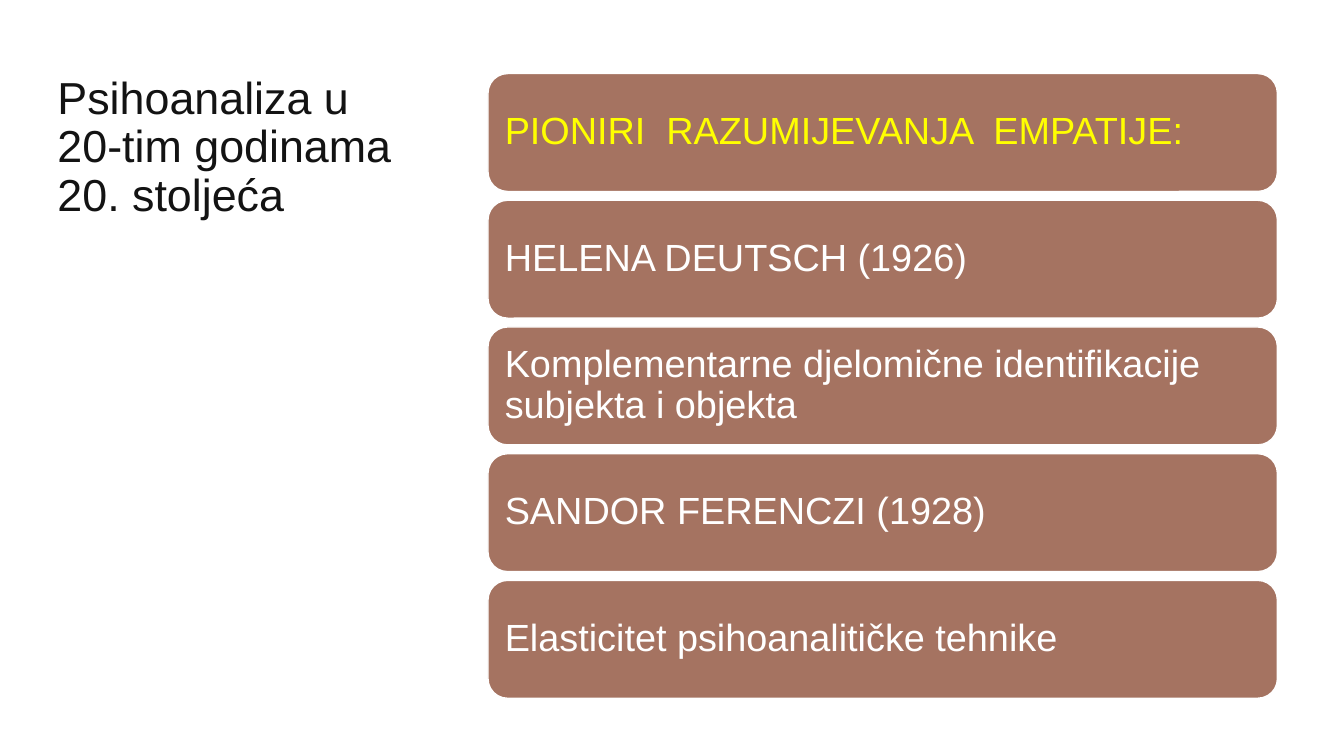
from dataclasses import dataclass

from pptx import Presentation
from pptx import util as u
from pptx.dml.color import RGBColor
from pptx.enum import shapes, text

INK = RGBColor(0x13, 0x13, 0x13)
BROWN = RGBColor(0xA5, 0x73, 0x61)
YELLOW = RGBColor(0xFF, 0xFF, 0x00)
WHITE = RGBColor(0xFF, 0xFF, 0xFF)
FONT = "Arial"

CARD_LEFT, CARD_TOP = 4.84, 0.73
CARD_WIDTH, CARD_HEIGHT = 7.83, 1.17
CARD_PITCH = 1.257
CARD_INSET = u.Inches(0.11)


@dataclass
class Card:
    wording: str
    color: RGBColor = WHITE


CARDS = [
    Card("PIONIRI  RAZUMIJEVANJA  EMPATIJE:", YELLOW),
    Card("HELENA DEUTSCH (1926)"),
    Card("Komplementarne djelomične identifikacije subjekta i objekta"),
    Card("SANDOR FERENCZI (1928)"),
    Card("Elasticitet psihoanalitičke tehnike"),
]


def write(frame, wording: str, size: float, color: RGBColor) -> None:
    """Fill a text frame with one left-aligned paragraph."""
    frame.word_wrap = True
    frame.auto_size = text.MSO_AUTO_SIZE.NONE
    para = frame.paragraphs[0]
    para.alignment = text.PP_ALIGN.LEFT
    para.line_spacing = 0.9
    span = para.add_run()
    span.text = wording
    span.font.name = FONT
    span.font.size = u.Pt(size)
    span.font.color.rgb = color


def add_title(page, wording: str) -> None:
    title = page.shapes.title
    title.left, title.top = u.Inches(0.47), u.Inches(0.7)
    title.width, title.height = u.Inches(3.82), u.Inches(3.96)
    title.text_frame.vertical_anchor = text.MSO_ANCHOR.TOP
    write(title.text_frame, wording, 32, INK)


def add_card(page, card: Card, row: int) -> None:
    box = page.shapes.add_shape(
        shapes.MSO_SHAPE.ROUNDED_RECTANGLE,
        u.Inches(CARD_LEFT), u.Inches(CARD_TOP + row * CARD_PITCH),
        u.Inches(CARD_WIDTH), u.Inches(CARD_HEIGHT),
    )
    box.shadow.inherit = False
    box.fill.solid()
    box.fill.fore_color.rgb = BROWN
    box.line.color.rgb = WHITE
    box.line.width = u.Pt(1)
    frame = box.text_frame
    frame.margin_left = frame.margin_right = CARD_INSET
    frame.margin_top = frame.margin_bottom = CARD_INSET
    frame.vertical_anchor = text.MSO_ANCHOR.MIDDLE
    write(frame, card.wording, 27, card.color)


def main() -> None:
    deck = Presentation()
    deck.slide_width, deck.slide_height = u.Inches(13.33), u.Inches(7.5)
    page = deck.slides.add_slide(deck.slide_layouts.get_by_name("Title Only"))
    page.background.fill.solid()
    page.background.fill.fore_color.rgb = WHITE

    # Heading on the left
    add_title(page, "Psihoanaliza u 20-tim godinama 20. stoljeća")

    # Column of cards on the right
    for row, card in enumerate(CARDS):
        add_card(page, card, row)

    deck.save("out.pptx")


if __name__ == "__main__":
    main()
